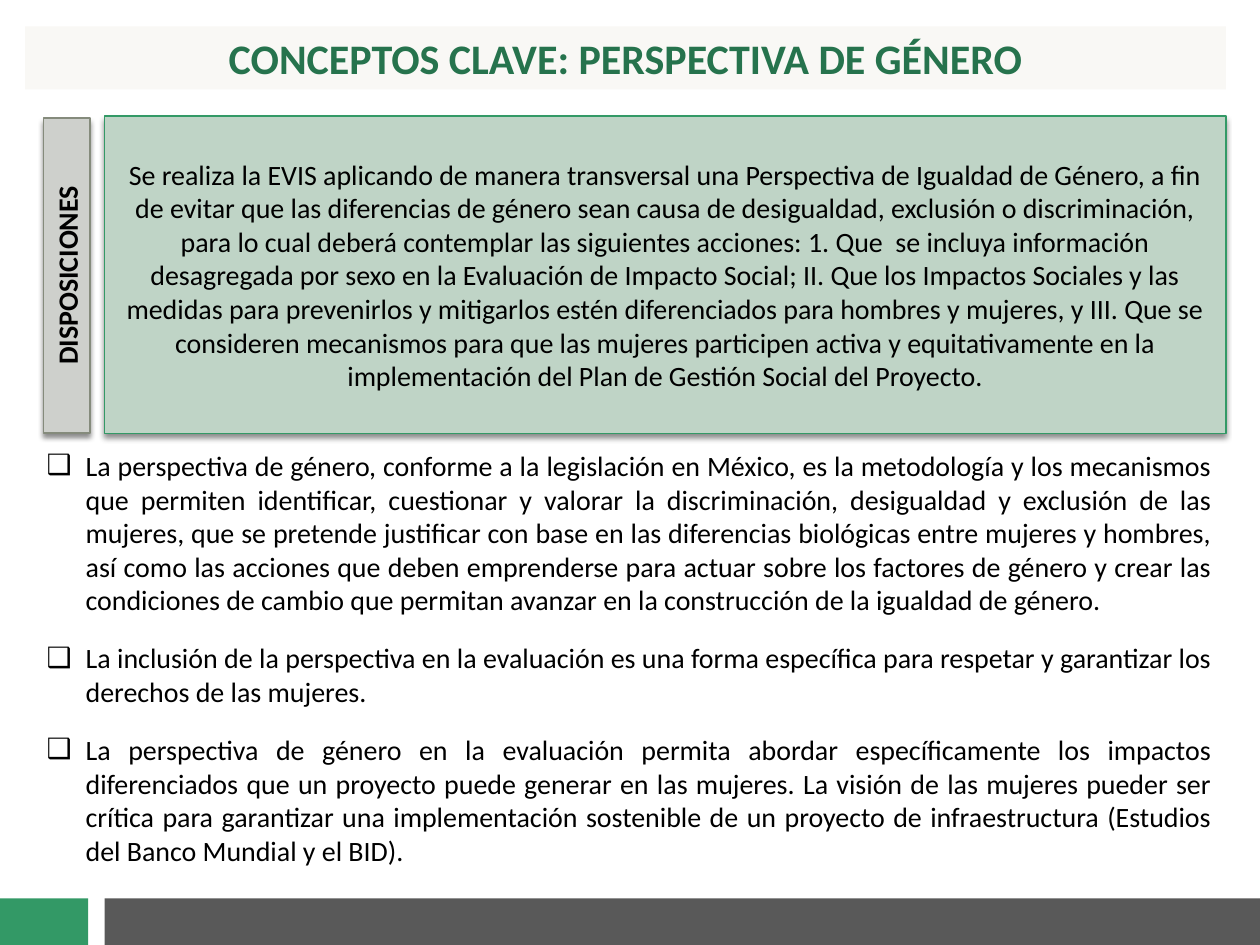
from lxml.etree import SubElement as Sub
from pptx import Presentation
from pptx.dml.color import RGBColor as RGB
from pptx.enum.shapes import MSO_SHAPE as Shape
from pptx.enum.text import MSO_ANCHOR as Anchor, MSO_AUTO_SIZE as Fit, PP_ALIGN as Align
from pptx.oxml.ns import qn
from pptx.util import Inches, Pt

GREEN = RGB(0x33, 0x99, 0x66)
DARK = RGB(0x26, 0x73, 0x4D)
MINT = RGB(0xBF, 0xD4, 0xC6)
CREAM = RGB(0xF9, 0xF8, 0xF5)
SILVER = RGB(0xCE, 0xD0, 0xCC)
EDGE = RGB(0x85, 0x8B, 0x7C)
GRAY = RGB(0x59, 0x59, 0x59)
BLACK = RGB(0, 0, 0)

TITLE = "CONCEPTOS CLAVE: PERSPECTIVA DE GÉNERO"
RULES = (
    "Se realiza la EVIS aplicando de manera transversal una Perspectiva de Igualdad de "
    "Género, a fin de evitar que las diferencias de género sean causa de desigualdad, "
    "exclusión o discriminación, para lo cual deberá contemplar las siguientes acciones: "
    "1. Que  se incluya información desagregada por sexo en la Evaluación de Impacto "
    "Social; II. Que los Impactos Sociales y las medidas para prevenirlos y mitigarlos "
    "estén diferenciados para hombres y mujeres, y III. Que se consideren mecanismos para "
    "que las mujeres participen activa y equitativamente en la implementación del Plan de "
    "Gestión Social del Proyecto."
)
POINTS = [
    "La perspectiva de género, conforme a la legislación en México, es la metodología y los "
    "mecanismos que permiten identificar, cuestionar y valorar la discriminación, desigualdad "
    "y exclusión de las mujeres, que se pretende justificar con base en las diferencias "
    "biológicas entre mujeres y hombres, así como las acciones que deben emprenderse para "
    "actuar sobre los factores de género y crear las condiciones de cambio que permitan "
    "avanzar en la construcción de la igualdad de género.",
    "La inclusión de la perspectiva en la evaluación es una forma específica para respetar y "
    "garantizar los derechos de las mujeres.",
    "La perspectiva de género en la evaluación permita abordar específicamente los impactos "
    "diferenciados que un proyecto puede generar en las mujeres. La visión de las mujeres "
    "pueder ser crítica para garantizar una implementación sostenible de un proyecto de "
    "infraestructura (Estudios del Banco Mundial y el BID).",
]


class Deck:
    """Holds the text style and the current slide."""
    face = "Calibri"
    size = 16

    def __init__(self, wide, high):
        self.prs = Presentation()
        self.prs.slide_width, self.prs.slide_height = Inches(wide), Inches(high)
        self.slide = self.prs.slides.add_slide(self.prs.slide_layouts[1])

    def place(self, shape, box):
        shape.left, shape.top, shape.width, shape.height = map(Inches, box)

    def style(self, para, align, size=None, color=BLACK, bold=False):
        para.alignment = align
        font = para.font
        font.name, font.size, font.bold = self.face, Pt(size or self.size), bold
        font.color.rgb = color

    def title(self, text, box):
        shape = self.slide.shapes.title
        self.place(shape, box)
        shape.fill.solid()
        shape.fill.fore_color.rgb = CREAM
        frame = shape.text_frame
        frame.text = text
        frame.auto_size = Fit.NONE
        frame.vertical_anchor = Anchor.MIDDLE
        self.style(frame.paragraphs[0], Align.CENTER, 24, DARK, True)

    def points(self, items, box):
        shape = self.slide.placeholders[1]
        self.place(shape, box)
        frame = shape.text_frame
        frame.text = "\n".join(items)
        frame.auto_size = Fit.NONE
        frame.vertical_anchor = Anchor.TOP
        for i, para in enumerate(frame.paragraphs):
            props = para._p.get_or_add_pPr()
            props.set("marL", str(Inches(0.31)))
            props.set("indent", str(-Inches(0.31)))
            Sub(props, qn("a:buChar")).set("char", "❑")
            para.space_before = Pt(14 if i else 0)
            self.style(para, Align.JUSTIFY)

    def bar(self, box, fill):
        shape = self.slide.shapes.add_shape(Shape.RECTANGLE, *map(Inches, box))
        shape.shadow.inherit = False
        shape.fill.solid()
        shape.fill.fore_color.rgb = fill
        shape.line.fill.background()
        return shape

    def panel(self, text, box, fill, line, turn=0, bold=False):
        shape = self.bar(box, fill)
        shape.rotation = turn
        shape.line.color.rgb = line
        shape.line.width = Pt(0.79)
        self.shade(shape)
        frame = shape.text_frame
        frame.word_wrap = True
        frame.vertical_anchor = Anchor.MIDDLE
        frame.text = text
        self.style(frame.paragraphs[0], Align.CENTER, bold=bold)

    def shade(self, shape):
        """Drop a soft shadow straight down."""
        effects = shape._element.spPr.find(qn("a:effectLst"))
        drop = Sub(effects, qn("a:outerShdw"), blurRad=str(Pt(3)), dist=str(Pt(2.4)),
                   dir="5400000", rotWithShape="0")
        color = Sub(drop, qn("a:srgbClr"), val=str(BLACK))
        Sub(color, qn("a:alpha"), val="45000")


def main():
    deck = Deck(10, 7.5)
    deck.bar((0.83, 7.13, 9.17, 0.37), GRAY)
    deck.bar((0, 7.13, 0.7, 0.37), GREEN)
    deck.title(TITLE, (0.2, 0.21, 9.53, 0.5))
    deck.panel(RULES, (0.83, 0.92, 8.9, 2.52), MINT, GREEN)
    deck.points(POINTS, (0.27, 3.51, 9.45, 3.6))
    deck.panel("DISPOSICIONES", (-0.72, 2, 2.5, 0.37), SILVER, EDGE, 270, True)
    deck.prs.save("out.pptx")


if __name__ == "__main__":
    main()
